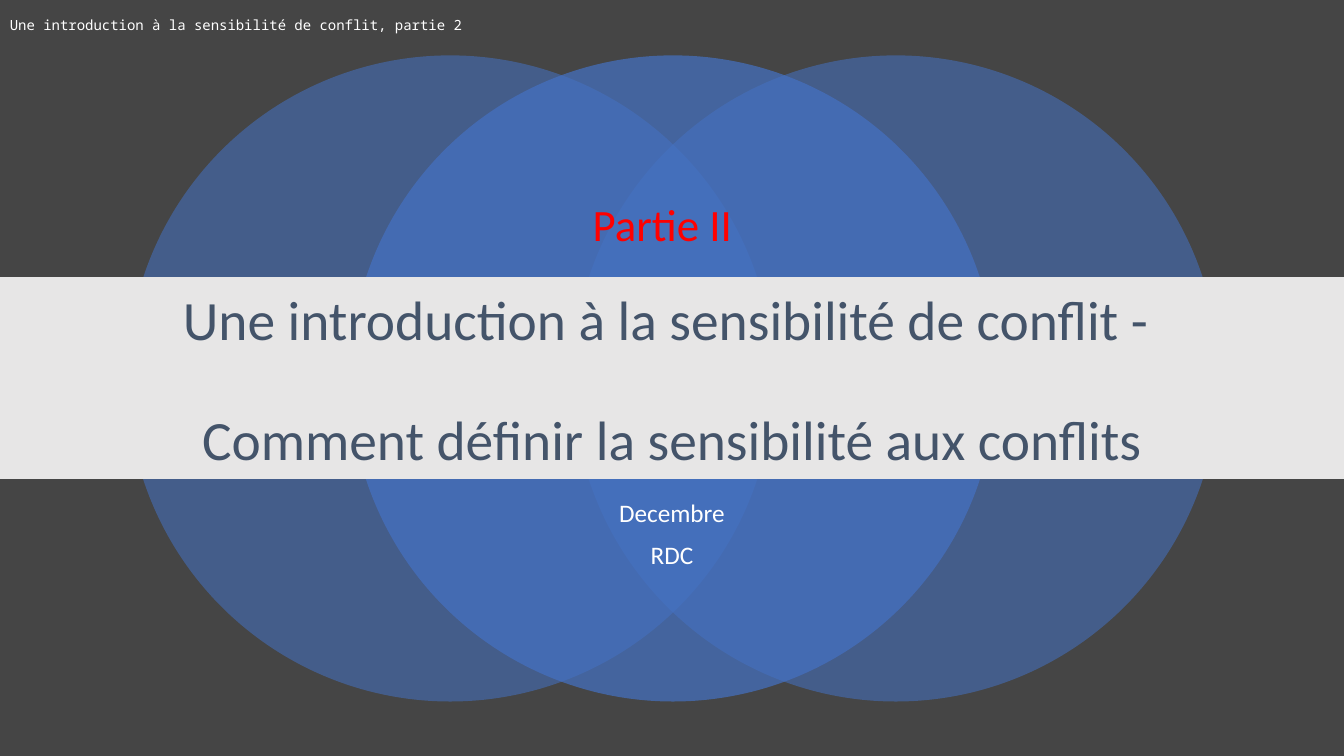
from dataclasses import dataclass

import lxml.etree
import pptx
import pptx.dml.color
import pptx.enum.shapes
import pptx.enum.text
import pptx.oxml.ns
import pptx.util

RGBColor = pptx.dml.color.RGBColor
Align = pptx.enum.text.PP_ALIGN
Anchor = pptx.enum.text.MSO_ANCHOR
AutoSize = pptx.enum.text.MSO_AUTO_SIZE
Preset = pptx.enum.shapes.MSO_SHAPE

CHARCOAL = RGBColor(0x45, 0x45, 0x45)
BLUE = RGBColor(0x44, 0x72, 0xC4)
PALE_GREY = RGBColor(0xE7, 0xE6, 0xE6)
SLATE = RGBColor(0x44, 0x54, 0x6A)
RED = RGBColor(0xFF, 0x00, 0x00)
WHITE = RGBColor(0xFF, 0xFF, 0xFF)

SLIDE_WIDTH = pptx.util.Inches(13.33)
SLIDE_HEIGHT = pptx.util.Inches(7.5)


@dataclass(frozen=True)
class Area:
    """Left, top, width and height in percent of the slide."""
    left: float
    top: float
    width: float
    height: float

    def box(self) -> tuple[int, int, int, int]:
        return (
            round(SLIDE_WIDTH * self.left / 100),
            round(SLIDE_HEIGHT * self.top / 100),
            round(SLIDE_WIDTH * self.width / 100),
            round(SLIDE_HEIGHT * self.height / 100),
        )


@dataclass(frozen=True)
class Circle:
    step: int
    opacity: int

    def area(self) -> Area:
        return Area(9.45 + 16.58 * self.step, 7.33, 48.09, 85.47)


CIRCLES = [Circle(0, 55), Circle(2, 55), Circle(1, 70)]


def place(shape, area: Area) -> None:
    shape.left, shape.top, shape.width, shape.height = area.box()


def add_filled(shapes, preset, area: Area, color: RGBColor, opacity: int = 100) -> None:
    shape = shapes.add_shape(preset, *area.box())
    shape.shadow.inherit = False
    shape.fill.solid()
    shape.fill.fore_color.rgb = color
    shape.line.fill.background()
    if opacity < 100:
        tint = shape.element.spPr.find(".//" + pptx.oxml.ns.qn("a:srgbClr"))
        alpha = lxml.etree.SubElement(tint, pptx.oxml.ns.qn("a:alpha"))
        alpha.set("val", str(opacity * 1000))


def write(shape, lines: list[str], *, size: float, color: RGBColor,
          font: str = "Calibri", align=Align.LEFT, anchor=Anchor.TOP,
          spacing: float = 1.0, before: float = 0, gap: float = 0,
          wrap: bool = True, auto_size=AutoSize.NONE) -> None:
    frame = shape.text_frame
    frame.word_wrap = wrap
    frame.auto_size = auto_size
    frame.vertical_anchor = anchor
    for index, line in enumerate(lines):
        paragraph = frame.add_paragraph() if index else frame.paragraphs[0]
        paragraph.alignment = align
        paragraph.line_spacing = spacing
        paragraph.space_before = pptx.util.Pt(gap if index else before)
        run = paragraph.add_run()
        run.text = line
        run.font.name = font
        run.font.size = pptx.util.Pt(size)
        run.font.color.rgb = color


def add_label(slide, area: Area, text: str, **style) -> None:
    write(slide.shapes.add_textbox(*area.box()), [text],
          auto_size=AutoSize.SHAPE_TO_FIT_TEXT, **style)


def main() -> None:
    presentation = pptx.Presentation()
    presentation.slide_width = SLIDE_WIDTH
    presentation.slide_height = SLIDE_HEIGHT
    slide = presentation.slides.add_slide(presentation.slide_layouts[0])
    slide.background.fill.solid()
    slide.background.fill.fore_color.rgb = CHARCOAL
    title, date_and_place = slide.placeholders

    venn = slide.shapes.add_group_shape()
    for circle in CIRCLES:
        add_filled(venn.shapes, Preset.OVAL, circle.area(), BLUE, circle.opacity)

    slide.shapes.element.append(date_and_place.element)
    place(date_and_place, Area(12.5, 65.6, 75, 17.87))
    write(date_and_place, ["Decembre", "RDC"], size=18, color=WHITE,
          align=Align.CENTER, spacing=0.9, before=10, gap=10)

    add_filled(slide.shapes, Preset.RECTANGLE, Area(0, 36.67, 100, 26.67), PALE_GREY)

    slide.shapes.element.append(title.element)
    place(title, Area(12.5, 40.53, 75, 20.13))
    write(title, ["Une introduction à la sensibilité de conflit - ",
                  "Comment définir la sensibilité aux conflits"],
          size=39.6, color=SLATE, align=Align.CENTER, anchor=Anchor.MIDDLE,
          spacing=0.9, gap=43)

    add_label(slide, Area(43.36, 25.33, 27.68, 8.53), "Partie II", size=32, color=RED)
    add_label(slide, Area(0, 0, 100, 6.67),
              "Une introduction à la sensibilité de conflit, partie 2",
              size=10, color=WHITE, font="Noto Sans Mono",
              anchor=Anchor.MIDDLE, wrap=False)

    presentation.save("out.pptx")


if __name__ == "__main__":
    main()
